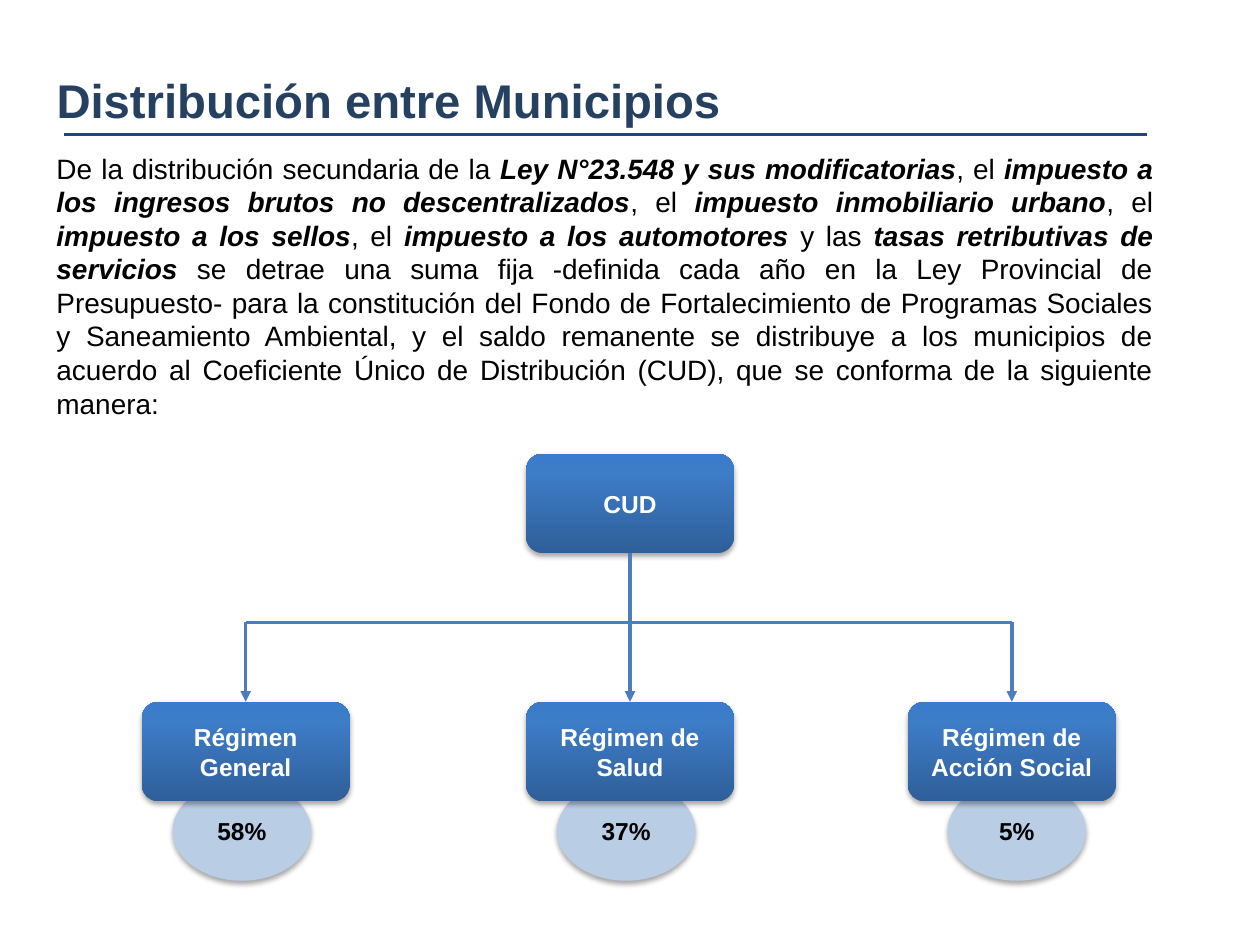
from lxml.etree import SubElement
from pptx import Presentation
from pptx.dml.color import RGBColor
from pptx.enum.shapes import MSO_CONNECTOR, MSO_SHAPE
from pptx.enum.text import MSO_ANCHOR, PP_ALIGN
from pptx.oxml.ns import qn
from pptx.util import Inches, Pt

COLORS = {
    "title": "254061", "rule": "1F497D", "line": "4B7EBC", "oval": "B9CDE5",
    "black": "000000", "white": "FFFFFF",
    "low": "2F5F99", "mid": "3D7CC7", "high": "3A7CCB",
}
STOPS = [(0, "low"), (80, "mid"), (100, "high")]
BOX_W, BOX_H = 1.65, 0.79
OVAL_W, OVAL_H = 1.1, 0.79
ROOT_Y, BUS_Y, BOX_Y, OVAL_Y = 3.6, 4.94, 5.57, 6.2
ROOT_X = 5
SHARES = [
    (1.95, "Régimen General", 1.92, "58%"),
    (5, "Régimen de Salud", 4.97, "37%"),
    (8.03, "Régimen de Acción Social", 8.07, "5%"),
]
BODY = [
    ("De la distribución secundaria de la ", False),
    ("Ley N°23.548 y sus modificatorias", True),
    (", el ", False),
    ("impuesto a los ingresos brutos no descentralizados", True),
    (", el ", False),
    ("impuesto inmobiliario urbano", True),
    (", el ", False),
    ("impuesto a los sellos", True),
    (", el ", False),
    ("impuesto a los automotores", True),
    (" y las ", False),
    ("tasas retributivas de servicios", True),
    (" se detrae una suma fija -definida cada año en la Ley Provincial de "
     "Presupuesto- para la constitución del Fondo de Fortalecimiento de "
     "Programas Sociales y Saneamiento Ambiental, y el saldo remanente se "
     "distribuye a los municipios de acuerdo al Coeficiente Único de "
     "Distribución (CUD), que se conforma de la siguiente manera:", False),
]


def color(name):
    return RGBColor.from_string(COLORS[name])


def add_run(para, text, size, tint, bold=False, italic=False):
    run = para.add_run()
    run.text = text
    font = run.font
    font.name, font.size = "Arial", Pt(size)
    font.bold, font.italic = bold, italic
    font.color.rgb = color(tint)


def add_text(slide, left, top, width, height, align):
    box = slide.shapes.add_textbox(
        Inches(left), Inches(top), Inches(width), Inches(height))
    box.text_frame.word_wrap = True
    para = box.text_frame.paragraphs[0]
    para.alignment = align
    return para


def add_shadow(shape):
    shape.shadow.inherit = False
    effects = shape._element.spPr.find(qn("a:effectLst"))
    outer = SubElement(effects, qn("a:outerShdw"), blurRad=str(Pt(3.1)),
                       dist=str(Pt(1.8)), dir="5400000", rotWithShape="0")
    tint = SubElement(outer, qn("a:srgbClr"), val=COLORS["black"])
    SubElement(tint, qn("a:alpha"), val="35000")


def add_node(slide, kind, mid, top, width, height, text, tint):
    shape = slide.shapes.add_shape(
        kind, Inches(mid - width / 2), Inches(top),
        Inches(width), Inches(height))
    shape.line.fill.background()
    add_shadow(shape)
    frame = shape.text_frame
    frame.word_wrap = True
    frame.vertical_anchor = MSO_ANCHOR.MIDDLE
    para = frame.paragraphs[0]
    para.alignment = PP_ALIGN.CENTER
    add_run(para, text, 14, tint, bold=True)
    return shape


def add_oval(slide, mid, text):
    oval = add_node(slide, MSO_SHAPE.OVAL, mid, OVAL_Y, OVAL_W, OVAL_H,
                    text, "black")
    oval.fill.solid()
    oval.fill.fore_color.rgb = color("oval")


def add_box(slide, mid, top, text):
    box = add_node(slide, MSO_SHAPE.ROUNDED_RECTANGLE, mid, top, BOX_W, BOX_H,
                   text, "white")
    box.fill.gradient()
    box.fill.gradient_angle = 90
    stops = box._element.spPr.find(qn("a:gradFill")).find(qn("a:gsLst"))
    for old in list(stops):
        stops.remove(old)
    for spot, name in STOPS:
        stop = SubElement(stops, qn("a:gs"), pos=str(spot * 1000))
        SubElement(stop, qn("a:srgbClr"), val=COLORS[name])
    return box


def add_line(slide, x1, y1, x2, y2, tint="line", width=2, arrow=False):
    line = slide.shapes.add_connector(
        MSO_CONNECTOR.STRAIGHT, Inches(x1), Inches(y1), Inches(x2), Inches(y2))
    line.line.color.rgb = color(tint)
    line.line.width = Pt(width)
    if arrow:
        SubElement(line.line._get_or_add_ln(), qn("a:tailEnd"),
                   type="triangle")
    SubElement(line._element.spPr, qn("a:effectLst"))
    return line


def main():
    deck = Presentation()
    deck.slide_width, deck.slide_height = Inches(10), Inches(7.5)
    slide = deck.slides.add_slide(deck.slide_layouts[6])

    for _, _, mid, share in SHARES:
        add_oval(slide, mid, share)

    add_line(slide, 0.51, 1.07, 9.1, 1.07, "rule", 1.5)
    body = add_text(slide, 0.35, 1.15, 8.9, 2.26, PP_ALIGN.JUSTIFY)
    for text, strong in BODY:
        add_run(body, text, 16, "black", strong, strong)
    title = add_text(slide, 0.35, 0.52, 8.82, 0.56, PP_ALIGN.LEFT)
    add_run(title, "Distribución entre Municipios", 27, "title", bold=True)

    root = add_box(slide, ROOT_X, ROOT_Y, "CUD")
    boxes = [add_box(slide, mid, BOX_Y, name) for mid, name, _, _ in SHARES]

    add_line(slide, SHARES[0][0], BUS_Y, SHARES[-1][0], BUS_Y)
    for (mid, _, _, _), box in zip(SHARES, boxes):
        drop = add_line(slide, mid, BUS_Y, mid, BOX_Y, arrow=True)
        drop.end_connect(box, 0)
    stem = add_line(slide, ROOT_X, BUS_Y, ROOT_X, ROOT_Y + BOX_H)
    stem.end_connect(root, 2)

    deck.save("out.pptx")


if __name__ == "__main__":
    main()
